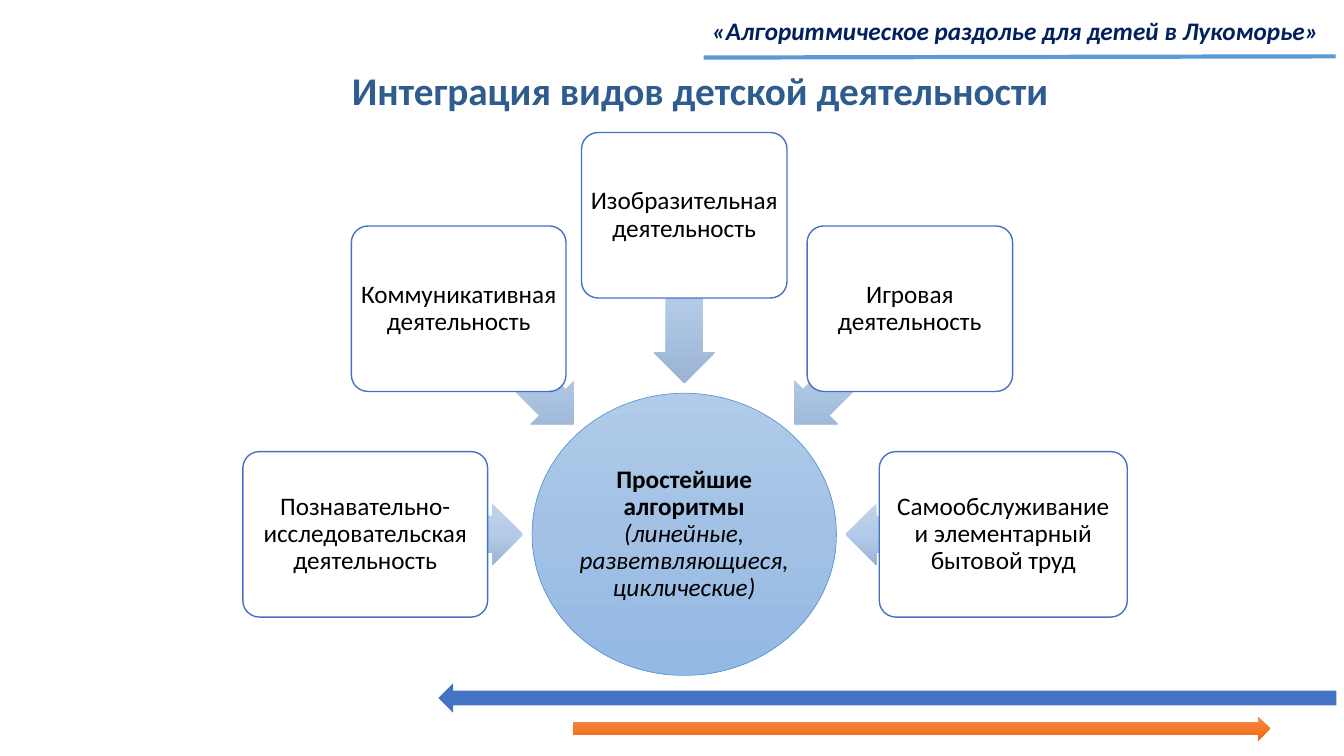
import math

from lxml import etree
from pptx import Presentation
from pptx import util as u
from pptx.dml.color import RGBColor
from pptx.enum import shapes, text
from pptx.oxml.ns import qn

Cm, Pt = u.Cm, u.Pt
SHAPE = shapes.MSO_SHAPE
FONT = "Calibri"
BLUE = "4472C4"
HUB_COLORS = ["B1CBE9", "A3C1E5", "93B9E4"]
SPOKE_COLORS = ["C0D2EB", "B3CBE9", "9BB4D3"]
ORANGE_COLORS = ["F18C57", "F67B28", "E56C19"]

# direction from the hub in degrees, box width, arrow length, arrow radius, label
ACTIVITIES = [
    (180, 6.17, 3.99, 6.06, "Познавательно-исследовательская деятельность"),
    (225, 5.41, 4.11, 5.98, "Коммуникативная деятельность"),
    (270, 5.18, 4.24, 5.93, "Изобразительная деятельность"),
    (315, 5.18, 4.11, 5.98, "Игровая деятельность"),
    (360, 6.25, 3.99, 6.06, "Самообслуживание и элементарный бытовой труд"),
]


def rgb(value):
    return RGBColor.from_string(value)


def fill_gradient(sp, colors):
    """Fill from top to bottom of the page, whatever the shape's rotation."""
    sp.fill.gradient()
    grad = sp._element.spPr.find(qn("a:gradFill"))
    grad.set("rotWithShape", "0")
    stops = grad.find(qn("a:gsLst"))
    for stop in list(stops):
        stops.remove(stop)
    for i, color in enumerate(colors):
        gs = etree.SubElement(stops, qn("a:gs"), pos=str(i * 50000))
        etree.SubElement(gs, qn("a:srgbClr"), val=color)
    sp.fill.gradient_angle = 270


def add_shape(slide, kind, box, fill, line=None, width=1):
    """Add a shape; fill is one colour or a list of gradient colours."""
    sp = slide.shapes.add_shape(kind, *map(Cm, box))
    sp.shadow.inherit = False
    if isinstance(fill, list):
        fill_gradient(sp, fill)
    else:
        sp.fill.solid()
        sp.fill.fore_color.rgb = rgb(fill)
    if line:
        sp.line.color.rgb = rgb(line)
        sp.line.width = Pt(width)
    else:
        sp.line.fill.background()
    return sp


def centered(x, y, w, h):
    return x - w / 2, y - h / 2, w, h


def set_font(p, size, color, bold=None, italic=None):
    p.font.name, p.font.size = FONT, Pt(size)
    p.font.color.rgb = rgb(color)
    p.font.bold, p.font.italic = bold, italic


def set_margins(tf, margin):
    tf.margin_left = tf.margin_right = Cm(margin)
    tf.margin_top = tf.margin_bottom = Cm(margin)


def label(sp, margin):
    """Prepare a centred paragraph inside a shape and return it."""
    tf = sp.text_frame
    tf.word_wrap = True
    tf.vertical_anchor = text.MSO_ANCHOR.MIDDLE
    set_margins(tf, margin)
    p = tf.paragraphs[0]
    p.alignment = text.PP_ALIGN.CENTER
    p.line_spacing = 0.9
    set_font(p, 18, "000000")
    return p


def draw_header(slide, x, y, w, h):
    line = slide.shapes.add_connector(
        shapes.MSO_CONNECTOR.STRAIGHT,
        Cm(x + 0.2), Cm(y + 1.6), Cm(x + w), Cm(y + 1.57))
    line.line.color.rgb = rgb("5B9BD5")
    line.line.width = Pt(3)
    etree.SubElement(line._element.spPr, qn("a:effectLst"))

    tf = slide.shapes.add_textbox(*map(Cm, (x, y, w, h))).text_frame
    tf.word_wrap = False
    p = tf.paragraphs[0]
    p.text = "«Алгоритмическое раздолье для детей в Лукоморье»"
    p.alignment = text.PP_ALIGN.CENTER
    p.line_spacing = Pt(33.6)
    set_font(p, 18, "002060", bold=True, italic=True)


def draw_title(slide, x, y, w, h):
    tf = slide.shapes.add_textbox(*map(Cm, (x, y, w, h))).text_frame
    tf.word_wrap = True
    set_margins(tf, 0.13)
    p = tf.paragraphs[0]
    p.text = "Интеграция видов детской деятельности"
    set_font(p, 28, "2E5C8E", bold=True)


def draw_bottom_arrows(slide, x, y, w):
    add_shape(slide, SHAPE.LEFT_ARROW, (x, y, w, 0.74), BLUE)
    add_shape(slide, SHAPE.RIGHT_ARROW,
              (x + 3.38, y + 0.84, w - 5.05, 0.61), ORANGE_COLORS)


def draw_activities(slide, x, y, w, h):
    """Draw the hub ellipse in the given box and the activities around it."""
    hub = add_shape(slide, SHAPE.OVAL, (x, y, w, h), HUB_COLORS, "5B9BD5", 0.5)
    p = label(hub, 0.03)
    for words, bold in (("Простейшие алгоритмы ", True),
                        ("(линейные, разветвляющиеся, циклические)", False)):
        r = p.add_run()
        r.text = words
        r.font.bold, r.font.italic = bold, not bold

    cx, cy = x + w / 2, y + h / 2
    for angle, width, length, radius, name in ACTIVITIES:
        dx, dy = math.cos(math.radians(angle)), math.sin(math.radians(angle))
        arrow = add_shape(
            slide, SHAPE.LEFT_ARROW,
            centered(cx + radius * dx, cy + radius * dy, length, 1.55),
            SPOKE_COLORS)
        arrow.adjustments[0] = 0.6
        arrow.rotation = angle % 360
        node = add_shape(
            slide, SHAPE.ROUNDED_RECTANGLE,
            centered(cx + 8.04 * dx, cy + 8.04 * dy, width, 4.17),
            "FFFFFF", BLUE)
        node.adjustments[0] = 0.1
        label(node, 0.09).text = name


def main():
    prs = Presentation()
    prs.slide_width, prs.slide_height = Cm(33.87), Cm(19.05)
    slide = prs.slides.add_slide(prs.slide_layouts[6])
    draw_title(slide, 8.74, 1.55, 20, 1.45)
    draw_bottom_arrows(slide, 11.05, 17.22, 22.63)
    draw_header(slide, 17.53, -0.15, 16.13, 1.35)
    draw_activities(slide, 13.41, 9.91, 7.67, 7.11)
    prs.save("out.pptx")


if __name__ == "__main__":
    main()
